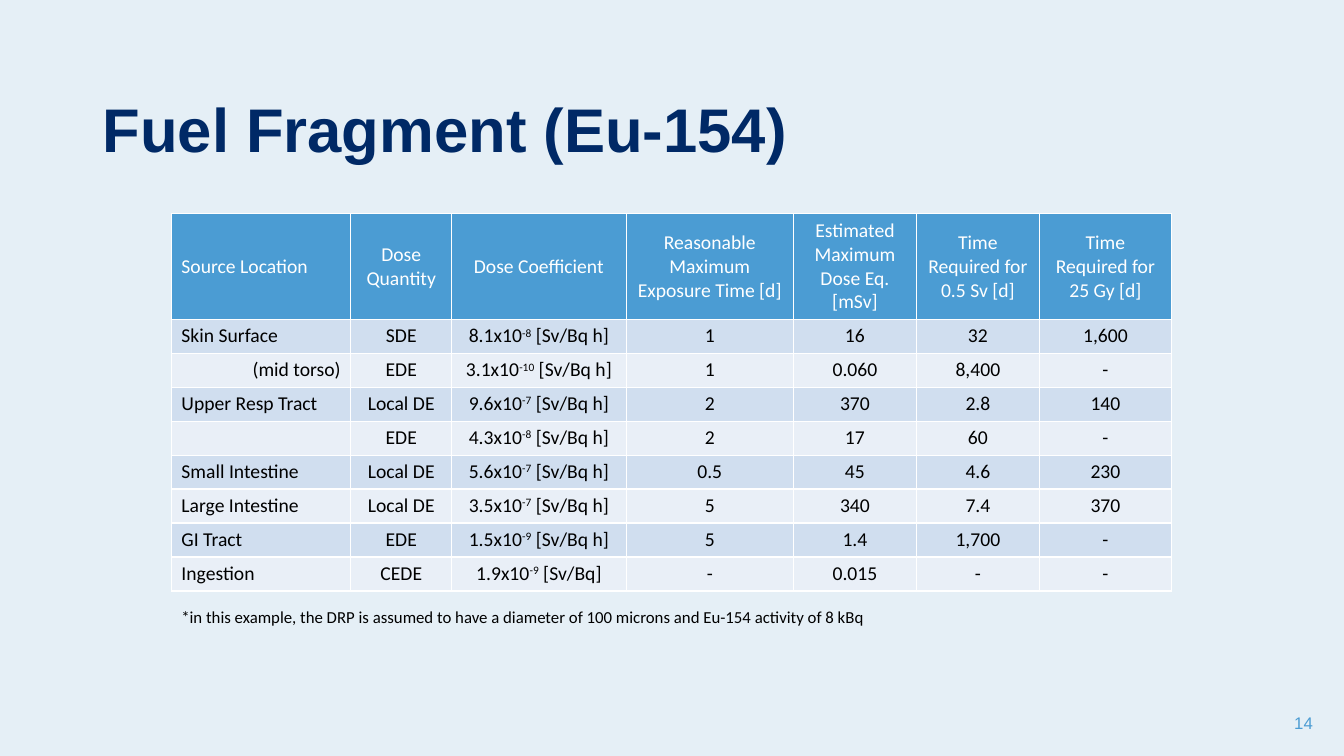
from dataclasses import dataclass

import lxml.etree
import pptx
import pptx.dml.color
import pptx.enum.text
import pptx.oxml.ns
import pptx.util

Inches = pptx.util.Inches
RGBColor = pptx.dml.color.RGBColor
Align = pptx.enum.text.PP_ALIGN
Anchor = pptx.enum.text.MSO_ANCHOR

BACKGROUND = RGBColor(0xE5, 0xEF, 0xF6)
NAVY = RGBColor(0x00, 0x29, 0x66)
BLUE = RGBColor(0x4B, 0x9C, 0xD3)
WHITE = RGBColor(0xFF, 0xFF, 0xFF)
BLACK = RGBColor(0x00, 0x00, 0x00)
BANDS = (RGBColor(0xD0, 0xDE, 0xEF), RGBColor(0xE9, 0xEF, 0xF7))

COLUMN_WIDTHS = (1.78, 1, 1.73, 1.66, 1.22, 1.22, 1.31)
HEADER_HEIGHT = 1.04
ROW_HEIGHT = 0.33
MIDDLE_COLUMN = 5
HEADINGS = (
    "Source Location", "Dose Quantity", "Dose Coefficient",
    "Reasonable Maximum Exposure Time [d]", "Estimated Maximum Dose Eq. [mSv]",
    "Time Required for 0.5 Sv [d]", "Time Required for 25 Gy [d]",
)


@dataclass(frozen=True)
class Style:
    size: float
    color: RGBColor
    font: str = "Calibri"
    bold: bool = False


@dataclass(frozen=True)
class Label:
    text: str
    left: float
    top: float
    width: float
    height: float
    style: Style
    align: Align = Align.LEFT
    anchor: Anchor = Anchor.MIDDLE
    line_spacing: float = 1.0


@dataclass(frozen=True)
class Dose:
    location: str
    quantity: str
    mantissa: str
    exponent: str
    exposure: str
    maximum: str
    half_sievert: str
    gray: str
    unit: str = " [Sv/Bq h]"
    align: Align = Align.LEFT

    def cells(self) -> list[tuple[str, ...]]:
        coefficient = (f"{self.mantissa}x10", self.exponent, self.unit)
        return [(self.location,), (self.quantity,), coefficient, (self.exposure,),
                (self.maximum,), (self.half_sievert,), (self.gray,)]


HEADER_STYLE = Style(14, WHITE)
BODY_STYLE = Style(14, BLACK)
LABELS = (
    Label("Fuel Fragment (Eu-154)", 0.92, 0.92, 11.5, 0.78,
          Style(44, NAVY, "Arial", True), line_spacing=0.9),
    Label("*in this example, the DRP is assumed to have a diameter of 100 microns "
          "and Eu-154 activity of 8 kBq", 1.7, 5.97, 7.73, 0.3,
          Style(12, BLACK), anchor=Anchor.TOP),
    Label("14", 10.12, 6.97, 3, 0.4, Style(12, BLUE, "Arial"), Align.RIGHT),
)
DOSES = (
    Dose("Skin Surface", "SDE", "8.1", "-8", "1", "16", "32", "1,600"),
    Dose("(mid torso)", "EDE", "3.1", "-10", "1", "0.060", "8,400", "-", align=Align.RIGHT),
    Dose("Upper Resp Tract", "Local DE", "9.6", "-7", "2", "370", "2.8", "140"),
    Dose("", "EDE", "4.3", "-8", "2", "17", "60", "-"),
    Dose("Small Intestine", "Local DE", "5.6", "-7", "0.5", "45", "4.6", "230"),
    Dose("Large Intestine", "Local DE", "3.5", "-7", "5", "340", "7.4", "370"),
    Dose("GI Tract", "EDE", "1.5", "-9", "5", "1.4", "1,700", "-"),
    Dose("Ingestion", "CEDE", "1.9", "-9", "-", "0.015", "-", "-", unit=" [Sv/Bq]"),
)


def add_span(para, text: str, style: Style, raised: bool = False) -> None:
    span = para.add_run()
    span.text = text
    span.font.name = style.font
    span.font.size = pptx.util.Pt(style.size)
    span.font.bold = style.bold
    span.font.color.rgb = style.color
    if raised:
        span._r.get_or_add_rPr().set("baseline", "30000")


def add_label(page, label: Label) -> None:
    box = page.shapes.add_textbox(Inches(label.left), Inches(label.top),
                                  Inches(label.width), Inches(label.height))
    frame = box.text_frame
    frame.word_wrap = True
    frame.vertical_anchor = label.anchor
    para = frame.paragraphs[0]
    para.alignment = label.align
    para.line_spacing = label.line_spacing
    add_span(para, label.text, label.style)


def add_borders(cell) -> None:
    properties = cell._tc.get_or_add_tcPr()
    qualify = pptx.oxml.ns.qn
    for side in ("L", "R", "T", "B"):
        line = lxml.etree.SubElement(properties, qualify(f"a:ln{side}"),
                                     w=str(pptx.util.Pt(1)))
        fill = lxml.etree.SubElement(line, qualify("a:solidFill"))
        lxml.etree.SubElement(fill, qualify("a:srgbClr"), val=str(WHITE))


def fill_cell(cell, parts: tuple[str, ...], style: Style, fill: RGBColor,
              align: Align, anchor: Anchor) -> None:
    add_borders(cell)
    cell.fill.solid()
    cell.fill.fore_color.rgb = fill
    cell.vertical_anchor = anchor
    para = cell.text_frame.paragraphs[0]
    para.alignment = align
    for index, part in enumerate(parts):
        if part:
            add_span(para, part, style, raised=index == 1)
    lxml.etree.SubElement(para._p, pptx.oxml.ns.qn("a:endParaRPr"),
                          sz=str(style.size * 100))


def add_dose_table(page) -> None:
    height = HEADER_HEIGHT + ROW_HEIGHT * len(DOSES)
    frame = page.shapes.add_table(len(DOSES) + 1, len(HEADINGS), Inches(1.7), Inches(2.12),
                                  Inches(sum(COLUMN_WIDTHS)), Inches(height))
    table = frame.table
    table.horz_banding = False
    for column, width in zip(table.columns, COLUMN_WIDTHS):
        column.width = Inches(width)
    for index, row in enumerate(table.rows):
        row.height = Inches(ROW_HEIGHT if index else HEADER_HEIGHT)
    for column, heading in enumerate(HEADINGS):
        align = Align.CENTER if column else Align.LEFT
        fill_cell(table.cell(0, column), (heading,), HEADER_STYLE, BLUE, align, Anchor.MIDDLE)
    for row, dose in enumerate(DOSES):
        for column, parts in enumerate(dose.cells()):
            align = Align.CENTER if column else dose.align
            anchor = Anchor.MIDDLE if column == MIDDLE_COLUMN else Anchor.TOP
            fill_cell(table.cell(row + 1, column), parts, BODY_STYLE,
                      BANDS[row % 2], align, anchor)


def main() -> None:
    deck = pptx.Presentation()
    deck.slide_width = Inches(13.33)
    deck.slide_height = Inches(7.5)
    page = deck.slides.add_slide(deck.slide_layouts[6])
    page.background.fill.solid()
    page.background.fill.fore_color.rgb = BACKGROUND
    add_dose_table(page)
    for label in LABELS:
        add_label(page, label)
    deck.save("out.pptx")


if __name__ == "__main__":
    main()
